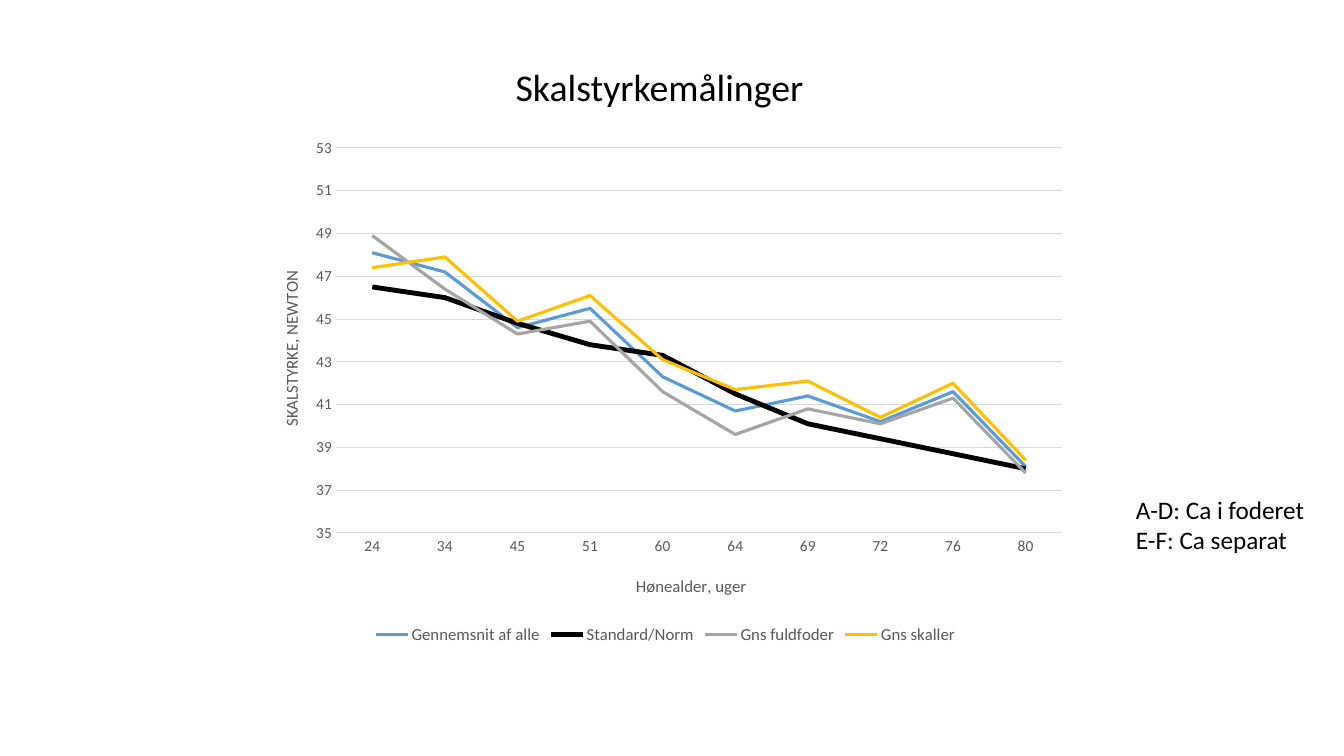
import pptx
import pptx.chart.data
import pptx.dml.color
import pptx.enum.chart
import pptx.enum.text
import pptx.oxml
import pptx.oxml.ns
import pptx.util

FONT = "Calibri"
GREY = "595959"
RULE = "D9D9D9"
AGES = ["24", "34", "45", "51", "60", "64", "69", "72", "76", "80"]
SERIES = [
    ("Gennemsnit af alle", "5B9BD5", 2.25,
     [48.1, 47.2, 44.6, 45.5, 42.3, 40.7, 41.4, 40.2, 41.6, 38.1]),
    ("Standard/Norm", "000000", 3.5,
     [46.5, 46, 44.8, 43.8, 43.3, 41.5, 40.1, 39.4, 38.7, 38]),
    ("Gns fuldfoder", "A5A5A5", 2.25,
     [48.9, 46.4, 44.3, 44.9, 41.6, 39.6, 40.8, 40.1, 41.3, 37.8]),
    ("Gns skaller", "FFC000", 2.25,
     [47.4, 47.9, 44.9, 46.1, 43.1, 41.7, 42.1, 40.4, 42, 38.4]),
]


def px(n):
    return round(n * 914400 / 100.8)


def color(code):
    return pptx.dml.color.RGBColor.from_string(code)


def style(font, size, code):
    font.name = FONT
    font.size = pptx.util.Pt(size)
    font.bold = False
    font.color.rgb = color(code)


def stroke(line, code, width):
    line.color.rgb = color(code)
    line.width = pptx.util.Pt(width)


def add_text(slide, box, text, size):
    shape = slide.shapes.add_textbox(*map(px, box))
    frame = shape.text_frame
    frame.word_wrap = True
    frame.text = text
    for para in frame.paragraphs:
        for run in para.runs:
            style(run.font, size, "000000")
    return frame


def add_title(slide, box):
    frame = add_text(slide, box, "Skalstyrkemålinger", 27)
    frame.vertical_anchor = pptx.enum.text.MSO_ANCHOR.MIDDLE
    para = frame.paragraphs[0]
    para.alignment = pptx.enum.text.PP_ALIGN.CENTER
    para.line_spacing = 0.9


def set_layout(parent, index, box, inner=False, **spots):
    """Place a chart part by px offsets (x, y, w, h) within the chart box."""
    for old in parent.findall(pptx.oxml.ns.qn("c:layout")):
        parent.remove(old)
    tags = '<c:layoutTarget val="inner"/>' if inner else ""
    tags += "".join(f'<c:{k}Mode val="edge"/>' for k in "xy")
    tags += "".join(f'<c:{k} val="{v / box[2 if k in "xw" else 3]:.4f}"/>'
                    for k, v in spots.items())
    parent.insert(index, pptx.oxml.parse_xml(
        f'<c:layout {pptx.oxml.ns.nsdecls("c")}>'
        f'<c:manualLayout>{tags}</c:manualLayout></c:layout>'))


def set_axis(axis, text, box, x, y):
    axis.major_tick_mark = pptx.enum.chart.XL_TICK_MARK.NONE
    axis.minor_tick_mark = pptx.enum.chart.XL_TICK_MARK.NONE
    style(axis.tick_labels.font, 11, GREY)
    title = axis.axis_title
    title.text_frame.text = text
    style(title.text_frame.paragraphs[0].runs[0].font, 12, GREY)
    set_layout(title._element, 1, box, x=x, y=y)


def add_graph(slide, box):
    data = pptx.chart.data.CategoryChartData(number_format="0.0")
    data.categories = AGES
    for name, _, _, vals in SERIES:
        data.add_series(name, vals)
    chart = slide.shapes.add_chart(
        pptx.enum.chart.XL_CHART_TYPE.LINE, *map(px, box), data).chart
    chart.has_title = False
    style(chart.font, 10, "000000")
    chart.plots[0].vary_by_categories = False
    for line, (_, code, width, _) in zip(chart.plots[0].series, SERIES):
        line.smooth = False
        line.marker.style = pptx.enum.chart.XL_MARKER_STYLE.NONE
        stroke(line.format.line, code, width)

    ages, force = chart.category_axis, chart.value_axis
    set_axis(ages, "Hønealder, uger", box, 381, 444)
    stroke(ages.format.line, RULE, 0.75)
    set_axis(force, "SKALSTYRKE, NEWTON", box, 25, 140)
    body = force.axis_title.text_frame._txBody.bodyPr
    body.set("rot", "-5400000")
    body.set("vert", "horz")
    force.minimum_scale, force.maximum_scale = 35, 53
    force.major_unit = 2
    force.tick_labels.number_format = "0"
    force.tick_labels.number_format_is_linked = False
    force.format.line.fill.background()
    stroke(force.major_gridlines.format.line, RULE, 0.75)

    chart.has_legend = True
    chart.legend.position = pptx.enum.chart.XL_LEGEND_POSITION.BOTTOM
    chart.legend.include_in_layout = False
    style(chart.legend.font, 12, GREY)
    area = chart._chartSpace.chart.plotArea
    set_layout(area, 0, box, inner=True, x=84, y=20, w=726, h=385)


def main():
    deck = pptx.Presentation()
    deck.slide_width, deck.slide_height = px(1344), px(756)
    slide = deck.slides.add_slide(deck.slide_layouts[6])
    add_title(slide, (211, 17, 897, 144))
    add_graph(slide, (252, 128, 827, 521))
    add_text(slide, (1126, 489, 218, 102),
             "A-D: Ca i foderet\nE-F: Ca separat", 18)
    deck.save("out.pptx")


if __name__ == "__main__":
    main()
